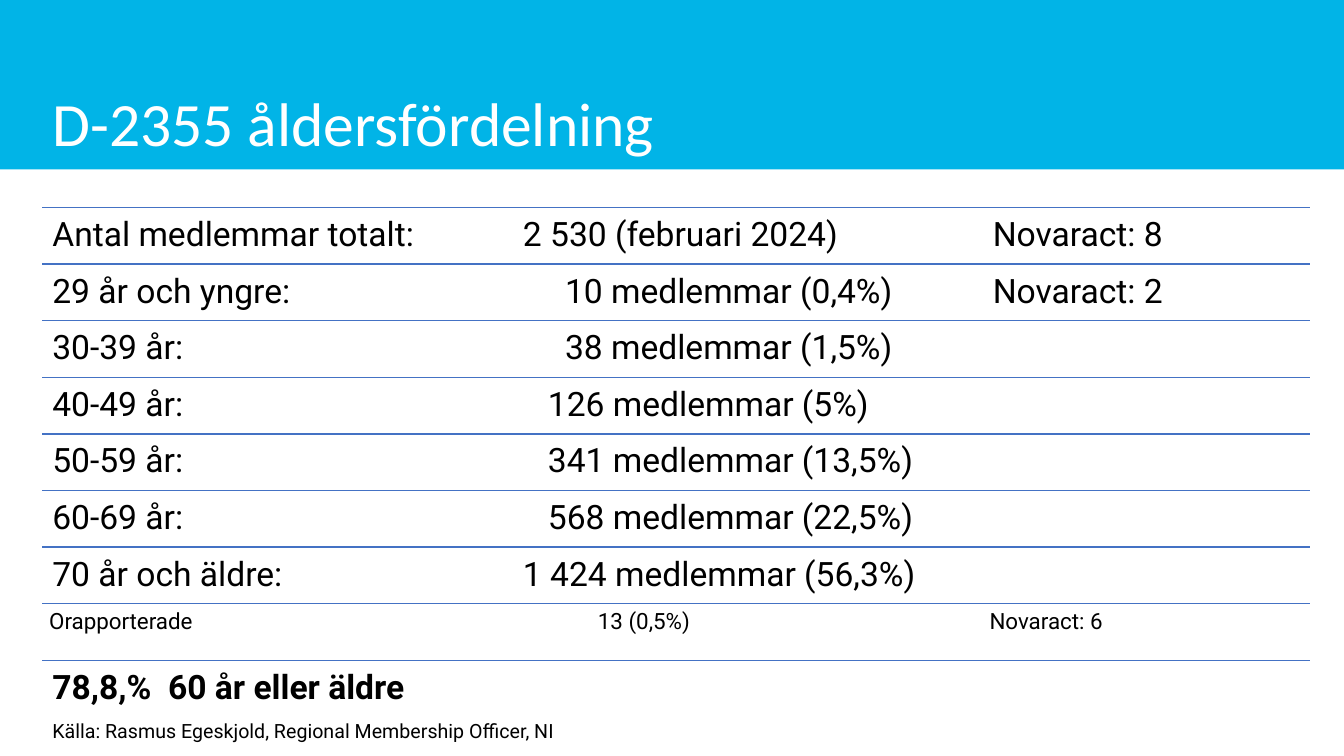
from lxml import etree
from pptx import Presentation
from pptx import util as u
from pptx.dml.color import RGBColor
from pptx.enum import shapes, text
from pptx.oxml.ns import qn

LEFT, WIDTH = 1.07, 31.95
TOP, STEP = 5.23, 11.41 / 8
BODY = dict(size=u.Pt(24), name="Roboto", bold=False)
SMALL = dict(BODY, size=u.Pt(16))
BOLD = dict(BODY, bold=True)
NOTE = dict(BODY, size=u.Pt(14))
HEAD = dict(size=u.Pt(44), name="Calibri", bold=False)
ROWS = [
    ("Antal medlemmar totalt:\t2 530 (februari 2024)\tNovaract: 8", 11.86, BODY, 0.25),
    ("29 år och yngre:\t10 medlemmar (0,4%)\tNovaract: 2", 12.92, BODY, 0.25),
    ("30-39 år:\t38 medlemmar (1,5%)", 12.92, BODY, 0.25),
    ("40-49 år:\t126 medlemmar (5%)", 12.49, BODY, 0.25),
    ("50-59 år:\t341 medlemmar (13,5%)", 12.49, BODY, 0.25),
    ("60-69 år:\t568 medlemmar (22,5%)", 12.49, BODY, 0.25),
    ("70 år och äldre:\t1 424 medlemmar (56,3%)", 11.86, BODY, 0.25),
    ("Orapporterade\t13 (0,5%)\tNovaract: 6", 13.83, SMALL, 0.17),
    ("78,8,%  60 år eller äldre", 11.86, BOLD, 0.25),
]


def paint(hue):
    """Turn a hex string into a colour."""
    return RGBColor.from_string(hue)


def place(item, *box):
    """Set left, top, width and height in centimetres."""
    for key, val in zip(("left", "top", "width", "height"), box):
        setattr(item, key, u.Cm(val))


def write(item, words, form, hue="000000", pad=(0.25, 0.25), anchor="TOP", gap=0.9):
    """Fill a shape with one formatted paragraph and return it."""
    frame = item.text_frame
    style = dict(word_wrap=True, auto_size=text.MSO_AUTO_SIZE.NONE,
                 vertical_anchor=text.MSO_ANCHOR[anchor],
                 margin_left=u.Cm(pad[0]), margin_right=u.Cm(pad[0]),
                 margin_top=u.Cm(pad[1]), margin_bottom=u.Cm(pad[1]))
    for key, val in style.items():
        setattr(frame, key, val)
    para = frame.paragraphs[0]
    para.alignment = text.PP_ALIGN.LEFT
    para.line_spacing = gap
    run = para.add_run()
    run.text = words
    for key, val in form.items():
        setattr(run.font, key, val)
    run.font.color.rgb = paint(hue)
    return para


def add_tabs(para, *stops):
    """Give a paragraph left tab stops in centimetres."""
    tabs = etree.SubElement(para._p.get_or_add_pPr(), qn("a:tabLst"))
    for stop in stops:
        etree.SubElement(tabs, qn("a:tab"), pos=str(u.Cm(stop)), algn="l")


def add_bar(slide):
    """Lay the blue band behind the title."""
    bar = slide.shapes.add_shape(shapes.MSO_SHAPE.RECTANGLE, 0, 0, u.Cm(33.87), u.Cm(4.27))
    bar.shadow.inherit = False
    bar.fill.solid()
    bar.fill.fore_color.rgb = paint("01B4E7")
    bar.line.fill.background()
    slide.shapes.title.element.addprevious(bar.element)


def add_rule(slide, top):
    """Draw a thin line across the list."""
    rule = slide.shapes.add_connector(
        shapes.MSO_CONNECTOR.STRAIGHT,
        u.Cm(LEFT), u.Cm(top), u.Cm(LEFT + WIDTH), u.Cm(top))
    rule.line.color.rgb = paint("4472C4")
    rule.line.width = u.Pt(1)
    etree.SubElement(rule.element.spPr, qn("a:effectLst"))


def add_text(slide, box, words, form, **style):
    """Add a text box and return its paragraph."""
    item = slide.shapes.add_textbox(*map(u.Cm, box))
    return write(item, words, form, **style)


def main():
    """Build and save the slide."""
    deck = Presentation()
    deck.slide_width, deck.slide_height = u.Cm(33.87), u.Cm(19.05)
    slide = deck.slides.add_slide(deck.slide_layouts[5])
    add_bar(slide)
    title = slide.shapes.title
    place(title, LEFT, 0, WIDTH, 4.27)
    write(title, "D-2355 åldersfördelning", HEAD, hue="FFFFFF", anchor="BOTTOM")
    for i, (words, stop, form, pad) in enumerate(ROWS):
        top = TOP + i * STEP
        add_rule(slide, top)
        para = add_text(slide, (LEFT, top, WIDTH, STEP), words, form, pad=(pad, pad))
        if "\t" in words:
            add_tabs(para, stop, 23.7)
    add_text(slide, (LEFT, 17.98, 17.81, 0.86),
             "Källa: Rasmus Egeskjold, Regional Membership Officer, NI",
             NOTE, pad=(0.25, 0.13), gap=1.0)
    deck.save("out.pptx")


if __name__ == "__main__":
    main()
